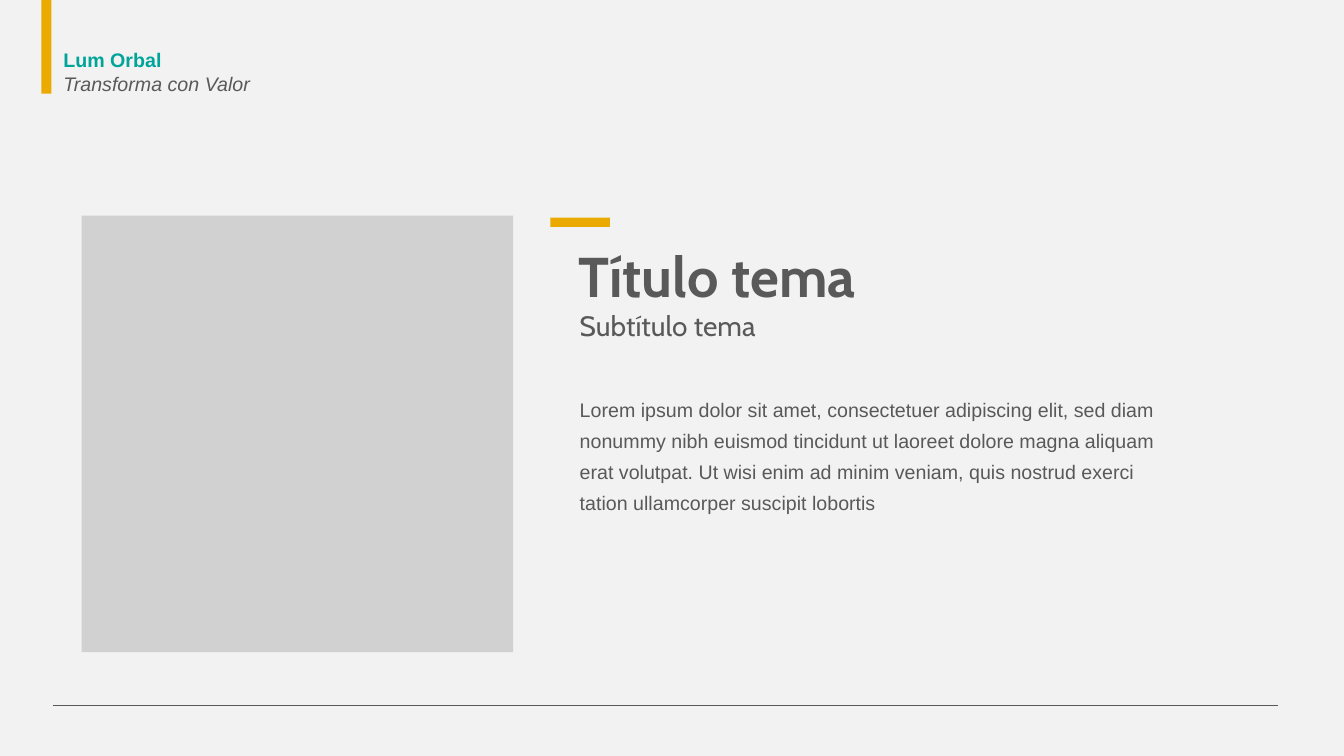
from pptx import Presentation
from pptx.dml.color import RGBColor
from pptx.enum.shapes import MSO_CONNECTOR, MSO_SHAPE
from pptx.enum.text import MSO_ANCHOR, MSO_AUTO_SIZE, PP_ALIGN
from pptx.oxml.ns import qn
from pptx.util import Inches, Pt
from lxml.etree import SubElement

COLORS = {
    "background": "F2F2F2",
    "panel": "D1D1D1",
    "text": "595959",
    "accent": "EAAA00",
    "brand": "00A499",
}
TWO_CONTENT_LAYOUT = 3


def rgb(name):
    return RGBColor.from_string(COLORS[name])


def add_block(slide, left, top, width, height, color):
    block = slide.shapes.add_shape(
        MSO_SHAPE.RECTANGLE, Inches(left), Inches(top), Inches(width), Inches(height))
    block.shadow.inherit = False
    block.fill.solid()
    block.fill.fore_color.rgb = rgb(color)
    block.line.fill.background()


def add_run(paragraph, text, size, font, color="text", bold=False, italic=False):
    run = paragraph.add_run()
    run.text = text
    run.font.size = Pt(size)
    run.font.name = font
    run.font.bold = bold
    run.font.italic = italic
    run.font.color.rgb = rgb(color)


def fill_placeholder(holder, box, text, size, font, bold=False, spacing=1.0,
                     before=0, anchor=MSO_ANCHOR.TOP):
    """Move a placeholder to its box and give it one unbulleted paragraph."""
    holder.left, holder.top, holder.width, holder.height = map(Inches, box)
    frame = holder.text_frame
    frame.word_wrap = True
    frame.auto_size = MSO_AUTO_SIZE.NONE
    frame.vertical_anchor = anchor
    paragraph = frame.paragraphs[0]
    paragraph.alignment = PP_ALIGN.LEFT
    paragraph.line_spacing = spacing
    paragraph.space_before = Pt(before)
    properties = paragraph._p.get_or_add_pPr()
    properties.set("marL", "0")
    properties.set("indent", "0")
    SubElement(properties, qn("a:buNone"))
    add_run(paragraph, text, size, font, bold=bold)


def add_header(slide, left, top, height):
    # Vertical accent bar with the name and motto beside its foot
    add_block(slide, left, top, 0.1, height, "accent")
    header = slide.shapes.add_textbox(
        Inches(left + 0.12), Inches(top + 0.43), Inches(2.06), Inches(0.57))
    frame = header.text_frame
    frame.word_wrap = False
    add_run(frame.paragraphs[0], "Lum Orbal", 14, "Arial", "brand", bold=True)
    add_run(frame.add_paragraph(), "Transforma con Valor", 14, "Arial", italic=True)


def add_topic(slide, left, top, width):
    # Short accent bar, title, subtitle and body text
    add_block(slide, left, top, 0.59, 0.09, "accent")
    title, subtitle, body = slide.placeholders
    text_left = left + 0.19
    text_width = width - 0.19
    fill_placeholder(title, (text_left - 0.01, top + 0.34, 3.95, 0.46),
                     "Título tema", 40, "Cabin", bold=True, anchor=MSO_ANCHOR.MIDDLE)
    fill_placeholder(subtitle, (text_left, top + 0.89, 3.76, 0.45),
                     "Subtítulo tema", 20, "Cabin", spacing=0.9, before=10)
    fill_placeholder(
        body, (text_left, top + 1.67, text_width, 1.3),
        "Lorem ipsum dolor sit amet, consectetuer adipiscing elit, sed diam "
        "nonummy nibh euismod tincidunt ut laoreet dolore magna aliquam erat "
        "volutpat. Ut wisi enim ad minim veniam, quis nostrud exerci tation "
        "ullamcorper suscipit lobortis",
        14, "Arial", spacing=Pt(22))


def add_footer_rule(slide, left, top, width):
    rule = slide.shapes.add_connector(
        MSO_CONNECTOR.STRAIGHT, Inches(left), Inches(top), Inches(left + width), Inches(top))
    rule.line.color.rgb = rgb("text")
    rule.line.width = Pt(0.5)
    SubElement(rule._element.spPr, qn("a:effectLst"))


def main():
    deck = Presentation()
    deck.slide_width, deck.slide_height = Inches(13.33), Inches(7.5)
    slide = deck.slides.add_slide(deck.slide_layouts[TWO_CONTENT_LAYOUT])
    slide.background.fill.solid()
    slide.background.fill.fore_color.rgb = rgb("background")

    # Image panel
    add_block(slide, 0.81, 2.14, 4.28, 4.33, "panel")
    add_topic(slide, 5.46, 2.16, 6.17)
    add_header(slide, 0.41, 0, 0.93)
    add_footer_rule(slide, 0.53, 7, 12.15)
    deck.save("out.pptx")


if __name__ == "__main__":
    main()
